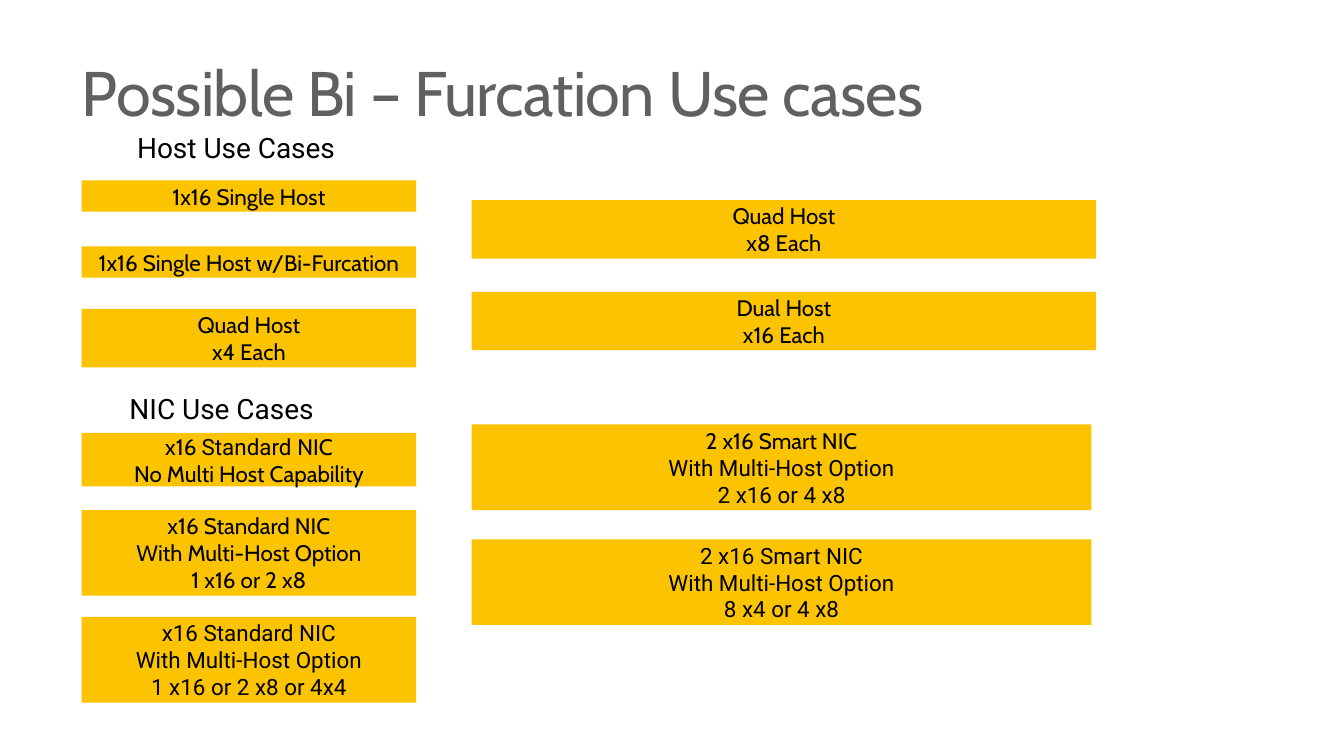
from pptx import Presentation
from pptx.dml.color import RGBColor
from pptx.enum.shapes import MSO_SHAPE
from pptx.enum.text import MSO_ANCHOR, MSO_AUTO_SIZE, PP_ALIGN
from pptx.util import Inches, Pt

BLACK = RGBColor(0x00, 0x00, 0x00)
GREY = RGBColor(0x60, 0x60, 0x60)
GOLD = RGBColor(0xFB, 0xC3, 0x00)
CABIN, ROBOTO = "Cabin", "Roboto"

# Column positions and widths
LEFT, RIGHT = 1.62, 9.36
NARROW, HOST, SMART = 6.64, 12.39, 12.3
OPTION = "With Multi-Host Option"

# Each box: left, top, width, height, lines; each line: its (text, font) runs
HOSTS = [
    (LEFT, 3.58, NARROW, 0.62, [[("1x16 Single Host", CABIN)]]),
    (LEFT, 4.89, NARROW, 0.62, [[("1x16 Single Host w/Bi-Furcation", CABIN)]]),
    (LEFT, 6.13, NARROW, 1.16, [[("Quad Host", CABIN)], [("x4 Each", CABIN)]]),
    (RIGHT, 3.97, HOST, 1.16, [[("Quad Host", CABIN)], [("x8 Each", CABIN)]]),
    (RIGHT, 5.79, HOST, 1.16, [[("Dual Host", CABIN)], [("x16 Each", CABIN)]]),
]
NICS = [
    (LEFT, 8.59, NARROW, 1.06,
     [[("x16 ", CABIN), ("Standard ", ROBOTO), ("NIC", CABIN)],
      [("No Multi Host Capability", CABIN)]]),
    (LEFT, 10.12, NARROW, 1.7,
     [[("x16 Standard NIC", CABIN)], [(OPTION, CABIN)],
      [("1 x16 or 2 x8", CABIN)]]),
    (LEFT, 12.24, NARROW, 1.7,
     [[("x16 Standard NIC", ROBOTO)], [(OPTION, ROBOTO)],
      [("1 x16 or 2 x8 or 4x4", ROBOTO)]]),
    (RIGHT, 8.42, SMART, 1.7,
     [[("2 x16 Smart NIC", CABIN)], [(OPTION, ROBOTO)],
      [("2 x16 or 4 x8", ROBOTO)]]),
    (RIGHT, 10.7, SMART, 1.7,
     [[("2 x16 Smart NIC", ROBOTO)], [(OPTION, ROBOTO)],
      [("8 x4 or 4 x8", ROBOTO)]]),
]


def set_all(target, values):
    for name, value in values.items():
        setattr(target, name, value)


def set_frame(frame, inset, **values):
    sides = ("left", "top", "right", "bottom")
    set_all(frame, {f"margin_{side}": Inches(inset) for side in sides})
    set_all(frame, values)


def add_run(para, text, font, size, color):
    run = para.add_run()
    run.text = text
    set_all(run.font, {"name": font, "size": Pt(size)})
    run.font.color.rgb = color
    return run


def add_title(slide, text):
    title = slide.shapes.title
    set_all(title, {"left": Inches(LEFT), "top": Inches(1.23),
                    "width": Inches(23.42), "height": Inches(1.23)})
    frame = title.text_frame
    set_frame(frame, 0, vertical_anchor=MSO_ANCHOR.TOP, word_wrap=True,
              auto_size=MSO_AUTO_SIZE.NONE)
    para = frame.paragraphs[0]
    set_all(para, {"alignment": PP_ALIGN.LEFT, "line_spacing": 0.9,
                   "space_before": Pt(0)})
    run = add_run(para, text, CABIN, 90, GREY)
    # Tighten the letter spacing
    run._r.get_or_add_rPr().set("spc", "-90")


def add_head(slide, left, top, width, text):
    box = slide.shapes.add_textbox(
        Inches(left), Inches(top), Inches(width), Inches(0.84))
    frame = box.text_frame
    set_frame(frame, 0.08, vertical_anchor=MSO_ANCHOR.MIDDLE, word_wrap=False,
              auto_size=MSO_AUTO_SIZE.SHAPE_TO_FIT_TEXT)
    add_run(frame.paragraphs[0], text, ROBOTO, 40, BLACK)


def add_box(slide, left, top, width, height, lines):
    box = slide.shapes.add_shape(
        MSO_SHAPE.RECTANGLE, Inches(left), Inches(top),
        Inches(width), Inches(height))
    box.shadow.inherit = False
    box.fill.solid()
    box.fill.fore_color.rgb = GOLD
    box.line.fill.background()
    frame = box.text_frame
    set_frame(frame, 0.04, vertical_anchor=MSO_ANCHOR.MIDDLE, word_wrap=True,
              auto_size=MSO_AUTO_SIZE.SHAPE_TO_FIT_TEXT)
    for i, line in enumerate(lines):
        para = frame.add_paragraph() if i else frame.paragraphs[0]
        para.alignment = PP_ALIGN.CENTER
        for text, font in line:
            add_run(para, text, font, 32, BLACK)


def main():
    deck = Presentation()
    set_all(deck, {"slide_width": Inches(26.67), "slide_height": Inches(15)})
    slide = deck.slides.add_slide(deck.slide_layouts[5])

    add_title(slide, "Possible Bi – Furcation Use cases")
    # Host and NIC sections
    add_head(slide, 2.64, 2.51, 4.22, "Host Use Cases")
    add_head(slide, 2.49, 7.68, 4.03, "NIC Use Cases")
    for item in HOSTS + NICS:
        add_box(slide, *item)

    deck.save("out.pptx")


if __name__ == "__main__":
    main()
